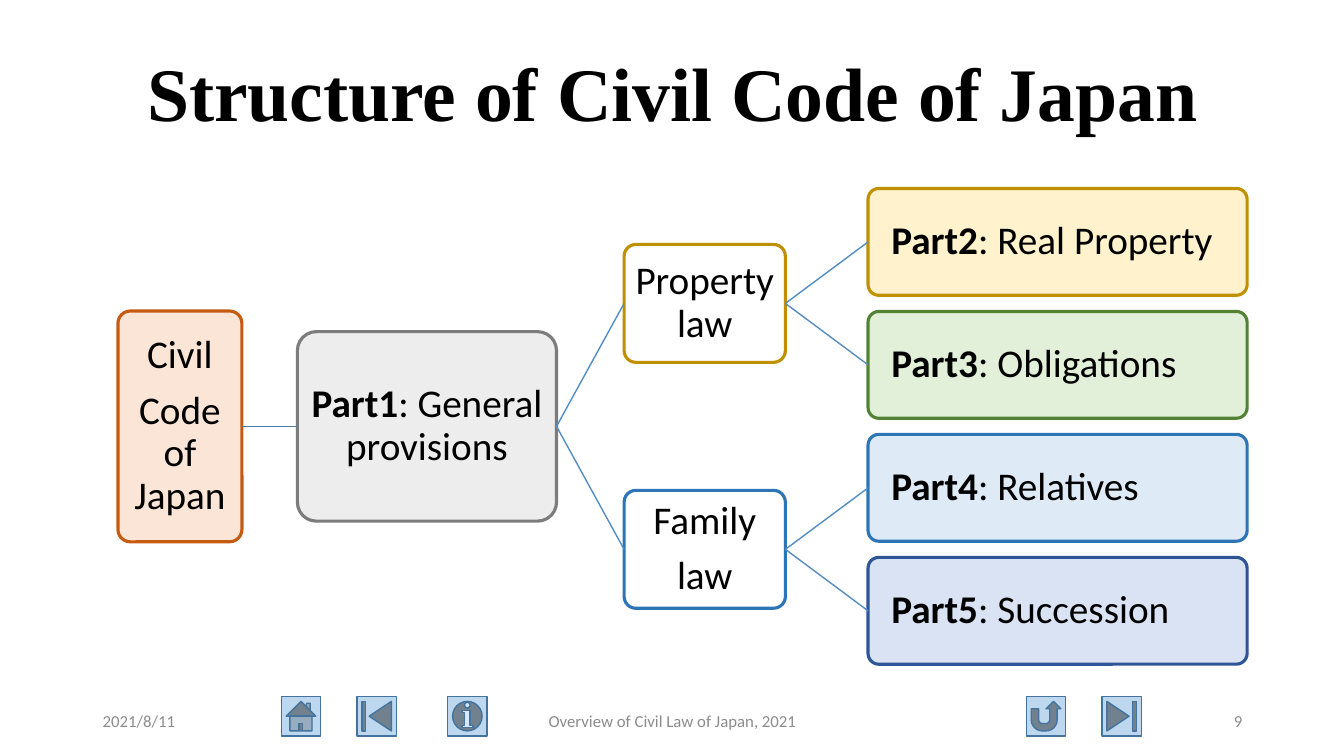
from pptx import Presentation
from pptx.dml.color import RGBColor
from pptx.enum.shapes import MSO_CONNECTOR, MSO_SHAPE
from pptx.enum.text import MSO_ANCHOR, PP_ALIGN
from pptx.oxml.ns import qn
from pptx.util import Inches, Pt
from lxml.etree import SubElement

BLACK = RGBColor(0x00, 0x00, 0x00)
WHITE = RGBColor(0xFF, 0xFF, 0xFF)
FOOTER_GREY = RGBColor(0x8C, 0x8C, 0x8C)
BUTTON_FILL = RGBColor(0xBD, 0xD7, 0xEE)
BUTTON_LINE = RGBColor(0x43, 0x73, 0x9E)
ROOT_LINK = RGBColor(0x49, 0x7C, 0xAB)
BRANCH_LINK = RGBColor(0x53, 0x8D, 0xC1)
ORANGE = RGBColor(0xC5, 0x5A, 0x11)
PALE_ORANGE = RGBColor(0xFB, 0xE5, 0xD6)
GREY = RGBColor(0x7C, 0x7C, 0x7C)
PALE_GREY = RGBColor(0xED, 0xED, 0xED)
GOLD = RGBColor(0xBF, 0x90, 0x00)
PALE_GOLD = RGBColor(0xFF, 0xF2, 0xCC)
GREEN = RGBColor(0x54, 0x82, 0x35)
PALE_GREEN = RGBColor(0xE2, 0xF0, 0xD9)
BLUE = RGBColor(0x2E, 0x75, 0xB6)
PALE_BLUE = RGBColor(0xDE, 0xEB, 0xF7)
NAVY = RGBColor(0x2F, 0x55, 0x97)
PALE_NAVY = RGBColor(0xDA, 0xE3, 0xF3)

ROOT_COLUMN, GENERAL_COLUMN, BRANCH_COLUMN, PART_COLUMN = (
    (0, 1.23), (1.78, 2.57), (5.02, 1.6), (7.44, 3.76))
ROW_PITCH = 1.22
PART_HEIGHT = 1.06
BRANCHES = [
    (["Property law"], WHITE, GOLD, [
        ("Part2", ": Real Property", PALE_GOLD, GOLD),
        ("Part3", ": Obligations", PALE_GREEN, GREEN)]),
    (["Family", "law"], WHITE, BLUE, [
        ("Part4", ": Relatives", PALE_BLUE, BLUE),
        ("Part5", ": Succession", PALE_NAVY, NAVY)]),
]
BUTTONS = [
    (MSO_SHAPE.ACTION_BUTTON_HOME, 2.79),
    (MSO_SHAPE.ACTION_BUTTON_BEGINNING, 3.54),
    (MSO_SHAPE.ACTION_BUTTON_INFORMATION, 4.44),
    (MSO_SHAPE.ACTION_BUTTON_RETURN, 10.18),
    (MSO_SHAPE.ACTION_BUTTON_END, 10.93),
]
FOOTER_TEXTS = [
    ("2021/8/11", 0.92, 3, PP_ALIGN.LEFT),
    ("Overview of Civil Law of Japan, 2021", 4.42, 4.5, PP_ALIGN.CENTER),
    ("9", 9.42, 3, PP_ALIGN.RIGHT),
]


def write_text(frame, lines, lead="", size=28, font="Calibri", color=BLACK,
               bold=False, align=PP_ALIGN.CENTER, spacing=0.9, after=0):
    """Write lines into a text frame, with an optional bold lead."""
    frame.word_wrap = True
    frame.vertical_anchor = MSO_ANCHOR.MIDDLE
    for index, line in enumerate(lines):
        paragraph = frame.paragraphs[0] if index == 0 else frame.add_paragraph()
        paragraph.alignment = align
        paragraph.line_spacing = spacing
        paragraph.space_after = Pt(after)
        pieces = [(lead, True)] if lead and index == 0 else []
        for words, is_bold in pieces + [(line, bold)]:
            run = paragraph.add_run()
            run.text = words
            run.font.name = font
            run.font.size = Pt(size)
            run.font.bold = is_bold
            run.font.color.rgb = color


def add_outlined(slide, preset, box, fill, line, weight):
    """Add a flat preset shape with a solid fill and outline."""
    outlined = slide.shapes.add_shape(preset, *map(Inches, box))
    outlined.shadow.inherit = False
    outlined.fill.solid()
    outlined.fill.fore_color.rgb = fill
    outlined.line.color.rgb = line
    outlined.line.width = Pt(weight)
    return outlined


def add_node(slide, box, lines, fill, line, lead="", align=PP_ALIGN.CENTER, indent=0.02):
    """Add one rounded box of the tree."""
    node = add_outlined(slide, MSO_SHAPE.ROUNDED_RECTANGLE, box, fill, line, 2.25)
    node.adjustments[0] = 0.1
    frame = node.text_frame
    frame.margin_left = Inches(indent)
    frame.margin_right = frame.margin_top = frame.margin_bottom = Inches(0.02)
    write_text(frame, lines, lead=lead, align=align, after=9.5)
    return node


def link(slide, parent, child, color):
    """Join the right side of a parent to the left side of its child."""
    connector = slide.shapes.add_connector(MSO_CONNECTOR.STRAIGHT, 0, 0, 0, 0)
    connector.begin_connect(parent, 3)
    connector.end_connect(child, 1)
    connector.line.color.rgb = color
    connector.line.width = Pt(1)
    SubElement(connector._element.spPr, qn("a:effectLst"))


def add_tree(slide, left, top):
    """Draw the code, its general provisions, branches and parts."""
    def place(column, row, height):
        offset, width = column
        middle = top + PART_HEIGHT / 2 + row * ROW_PITCH
        return left + offset, middle - height / 2, width, height

    root = add_node(slide, place(ROOT_COLUMN, 1.5, 2.29), ["Civil", "Code of Japan"],
                    PALE_ORANGE, ORANGE)
    general = add_node(slide, place(GENERAL_COLUMN, 1.5, 1.88), [": General provisions"],
                       PALE_GREY, GREY, lead="Part1")
    link(slide, root, general, ROOT_LINK)
    row = 0
    for lines, fill, line, parts in BRANCHES:
        center = row + (len(parts) - 1) / 2
        branch = add_node(slide, place(BRANCH_COLUMN, center, 1.17), lines, fill, line)
        link(slide, general, branch, BRANCH_LINK)
        for number, subject, part_fill, part_line in parts:
            part = add_node(slide, place(PART_COLUMN, row, PART_HEIGHT), [subject],
                            part_fill, part_line, lead=number,
                            align=PP_ALIGN.LEFT, indent=0.2)
            link(slide, branch, part, BRANCH_LINK)
            row += 1


def add_title(slide, left, top, width, height):
    """Place and format the slide title."""
    title = slide.shapes.title
    title.left, title.top, title.width, title.height = map(
        Inches, (left, top, width, height))
    write_text(title.text_frame, ["Structure of Civil Code of Japan"], size=54,
               font="Times New Roman", bold=True)


def add_footer(slide, top):
    """Place the navigation buttons and the footer texts."""
    for preset, left in BUTTONS:
        add_outlined(slide, preset, (left, top, 0.39, 0.39), BUTTON_FILL, BUTTON_LINE, 1)
    for words, left, width, align in FOOTER_TEXTS:
        footer = slide.shapes.add_textbox(*map(Inches, (left, top + 0.04, width, 0.4)))
        write_text(footer.text_frame, [words], size=12, color=FOOTER_GREY,
                   align=align, spacing=1)


def main():
    """Build and save the slide."""
    presentation = Presentation()
    presentation.slide_width = Inches(13.33)
    presentation.slide_height = Inches(7.5)
    slide = presentation.slides.add_slide(presentation.slide_layouts[5])
    add_title(slide, 0.92, 0.4, 11.5, 1.13)
    add_tree(slide, 1.17, 1.87)
    add_footer(slide, 6.91)
    presentation.save("out.pptx")


if __name__ == "__main__":
    main()
